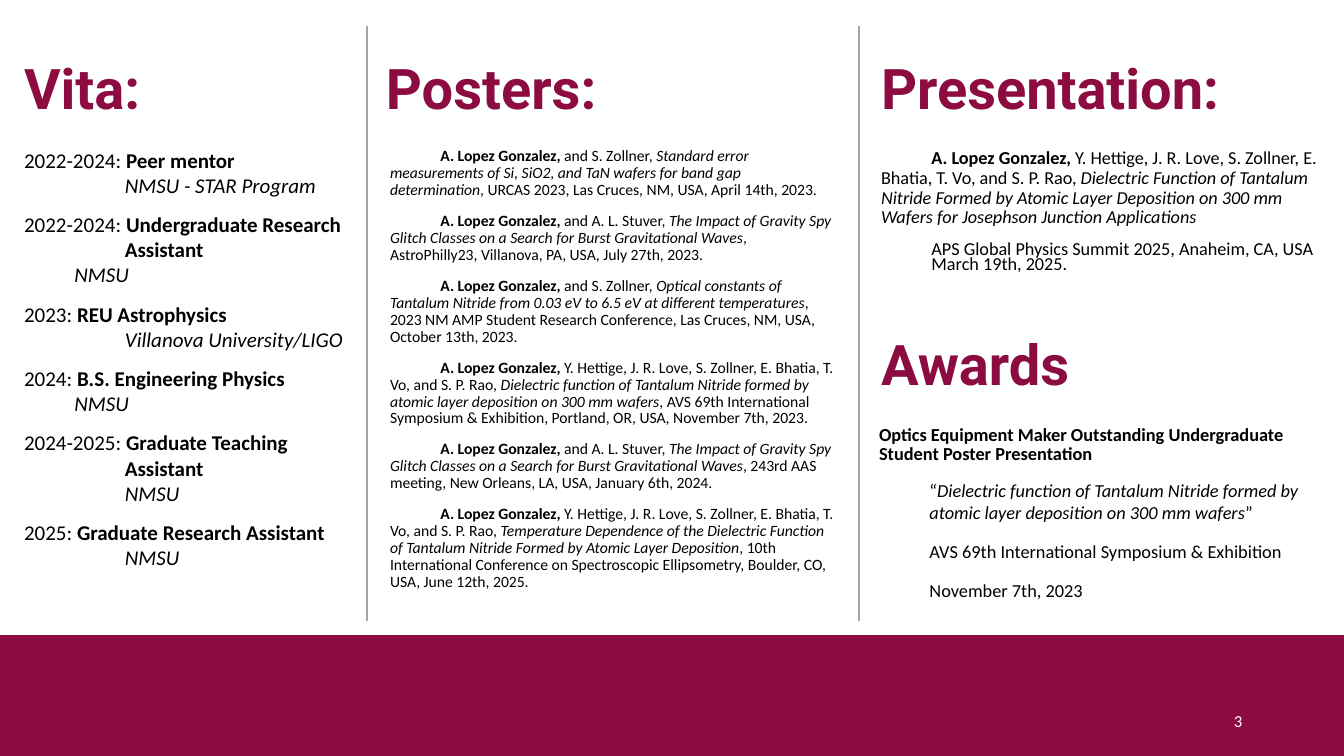
import collections
import pptx
import pptx.dml.color
import pptx.enum.shapes
import pptx.enum.text
import pptx.oxml.ns
import pptx.util
import lxml.etree

Inches = pptx.util.Inches
Pt = pptx.util.Pt
RGBColor = pptx.dml.color.RGBColor
Anchor = pptx.enum.text.MSO_ANCHOR
Align = pptx.enum.text.PP_ALIGN

MAROON = RGBColor(0x8C, 0x0B, 0x41)
WHITE = RGBColor(0xFE, 0xFF, 0xFF)
BLACK = RGBColor(0, 0, 0)
GRAY = RGBColor(0xA5, 0xA5, 0xA5)

Box = collections.namedtuple("Box", "left top width height")
Line = collections.namedtuple(
    "Line", "spans margin indent spacing before", defaults=(0, 0, 1, 0))

HEADING_HEIGHT = 1.45
AUTHOR = ("A. Lopez Gonzalez, ", "b")
WITH_ZOLLNER = "and S. Zollner, "
WITH_STUVER = "and A. L. Stuver, "
WITH_TEAM = "Y. Hettige, J. R. Love, S. Zollner, E. Bhatia, T. Vo, and S. P. Rao, "
GLITCH_TITLE = ("The Impact of Gravity Spy Glitch Classes on a Search "
                "for Burst Gravitational Waves")
FILM_TITLE = ("Dielectric function of Tantalum Nitride formed by "
              "atomic layer deposition on 300 mm wafers")

JOBS = [
    ("2022-2024: ", "Peer mentor", "", "NMSU - STAR Program", 1),
    ("2022-2024: ", "Undergraduate Research", "Assistant", "NMSU", 0.5),
    ("2023: ", "REU Astrophysics", "", "Villanova University/LIGO", 1),
    ("2024: ", "B.S. Engineering Physics", "", "NMSU", 0.5),
    ("2024-2025: ", "Graduate Teaching", "Assistant", "NMSU", 1),
    ("2025: ", "Graduate Research Assistant", "", "NMSU", 1),
]

POSTERS = [
    (WITH_ZOLLNER,
     "Standard error measurements of Si, SiO2, and TaN wafers for band gap determination",
     ", URCAS 2023, Las Cruces, NM, USA, April 14th, 2023."),
    (WITH_STUVER, GLITCH_TITLE,
     ", AstroPhilly23, Villanova, PA, USA, July 27th, 2023."),
    (WITH_ZOLLNER,
     "Optical constants of Tantalum Nitride from 0.03 eV to 6.5 eV at different temperatures",
     ", 2023 NM AMP Student Research Conference, Las Cruces, NM, USA, October 13th, 2023."),
    (WITH_TEAM, FILM_TITLE,
     ", AVS 69th International Symposium & Exhibition, Portland, OR, USA, November 7th, 2023."),
    (WITH_STUVER, GLITCH_TITLE,
     ", 243rd AAS meeting, New Orleans, LA, USA, January 6th, 2024."),
    (WITH_TEAM,
     "Temperature Dependence of the Dielectric Function of Tantalum Nitride "
     "Formed by Atomic Layer Deposition",
     ", 10th International Conference on Spectroscopic Ellipsometry, Boulder, CO, USA, "
     "June 12th, 2025."),
]


def add_text(page, box, lines, size, font="Calibri", color=BLACK,
             anchor=Anchor.TOP, align=Align.LEFT):
    frame = page.shapes.add_textbox(*map(Inches, box)).text_frame
    frame.word_wrap = True
    frame.vertical_anchor = anchor
    for number, line in enumerate(lines):
        para = frame.add_paragraph() if number else frame.paragraphs[0]
        properties = para._p.get_or_add_pPr()
        properties.set("marL", str(Inches(line.margin)))
        properties.set("indent", str(Inches(line.indent)))
        para.alignment = align
        para.line_spacing = line.spacing
        para.space_before = Pt(line.before)
        for text, style in line.spans:
            span = para.add_run()
            span.text = text
            span.font.name = font
            span.font.size = Pt(size)
            span.font.color.rgb = color
            span.font.bold = style == "b"
            span.font.italic = style == "i"


def add_heading(page, box, title):
    add_text(page, Box(box.left, box.top, box.width, HEADING_HEIGHT),
             [Line([(title, "b")], spacing=0.9)],
             size=40, font="Roboto", color=MAROON, anchor=Anchor.MIDDLE)


def add_vita(page, box):
    add_heading(page, box, "Vita:")
    lines = []
    for years, role, role_end, place, indent in JOBS:
        lines.append(Line([(years, ""), (role, "b")], before=10 if lines else 0))
        if role_end:
            lines.append(Line([(role_end, "b")], margin=0.5, indent=0.5))
        lines.append(Line([(place, "i")], indent=indent))
    add_text(page, Box(box.left, box.top + 1.23, 3.41, 4.42), lines, size=15)


def add_posters(page, box):
    add_heading(page, box, "Posters:")
    lines = [
        Line([AUTHOR, (others, ""), (title, "i"), (venue, "")],
             indent=0.5, spacing=0.9, before=10 if number else 0)
        for number, (others, title, venue) in enumerate(POSTERS)
    ]
    add_text(page, Box(box.left + 0.04, box.top + 1.24, 4.62, 4.58), lines, size=11.2)


def add_presentation(page, box):
    add_heading(page, box, "Presentation:")
    title = ("Dielectric Function of Tantalum Nitride Formed by Atomic Layer Deposition "
             "on 300 mm Wafers for Josephson Junction Applications")
    lines = [
        Line([AUTHOR, (WITH_TEAM, ""), (title, "i")], indent=0.5, spacing=0.9),
        Line([("APS Global Physics Summit 2025, Anaheim, CA, USA", "")],
             margin=0.5, spacing=0.7, before=11),
        Line([("March 19th, 2025.", "")], margin=0.5, spacing=0.7),
    ]
    add_text(page, Box(box.left, box.top + 1.25, 4.59, 1.86), lines, size=13)


def add_awards(page, box):
    add_heading(page, box, "Awards")
    prize = "Optics Equipment Maker Outstanding Undergraduate Student Poster Presentation"
    lines = [
        Line([(prize, "b")], spacing=0.9),
        Line([("“", ""), (FILM_TITLE, "i"), ("”", "")], margin=0.5, before=10),
    ]
    for detail in ("AVS 69th International Symposium & Exhibition", "November 7th, 2023"):
        lines.append(Line([(detail, "")], indent=0.5, spacing=1.15, before=10))
    add_text(page, Box(box.left - 0.02, box.top + 1.25, 4.59, 1.83), lines, size=13.1)


def add_footer(page, box):
    band = page.shapes.add_shape(
        pptx.enum.shapes.MSO_SHAPE.RECTANGLE, *map(Inches, box))
    band.shadow.inherit = False
    band.fill.solid()
    band.fill.fore_color.rgb = MAROON
    band.line.fill.background()
    add_text(page, Box(box.left + 9.42, box.top + 0.65, 3, 0.4), [Line([("3", "")])],
             size=12, color=WHITE, anchor=Anchor.MIDDLE, align=Align.RIGHT)


def add_divider(page, box):
    divider = page.shapes.add_connector(
        pptx.enum.shapes.MSO_CONNECTOR.STRAIGHT,
        Inches(box.left), Inches(box.top),
        Inches(box.left + box.width), Inches(box.top + box.height))
    divider.line.color.rgb = GRAY
    divider.line.width = Pt(1.5)
    lxml.etree.SubElement(divider._element.spPr, pptx.oxml.ns.qn("a:effectLst"))


def main():
    deck = pptx.Presentation()
    deck.slide_width = Inches(13.33)
    deck.slide_height = Inches(7.5)
    page = deck.slides.add_slide(deck.slide_layouts[6])
    page.background.fill.solid()
    page.background.fill.fore_color.rgb = WHITE
    add_footer(page, Box(0, 6.3, 13.33, 1.2))
    add_vita(page, Box(0.14, 0.18, 3.64, 5.65))
    add_posters(page, Box(3.73, 0.18, 4.3, 5.82))
    add_presentation(page, Box(8.64, 0.18, 4.7, 3.11))
    add_awards(page, Box(8.64, 2.92, 4.7, 3.08))
    for left in (3.64, 8.52):
        add_divider(page, Box(left, 0.26, 0, 5.9))
    deck.save("out.pptx")


if __name__ == "__main__":
    main()
